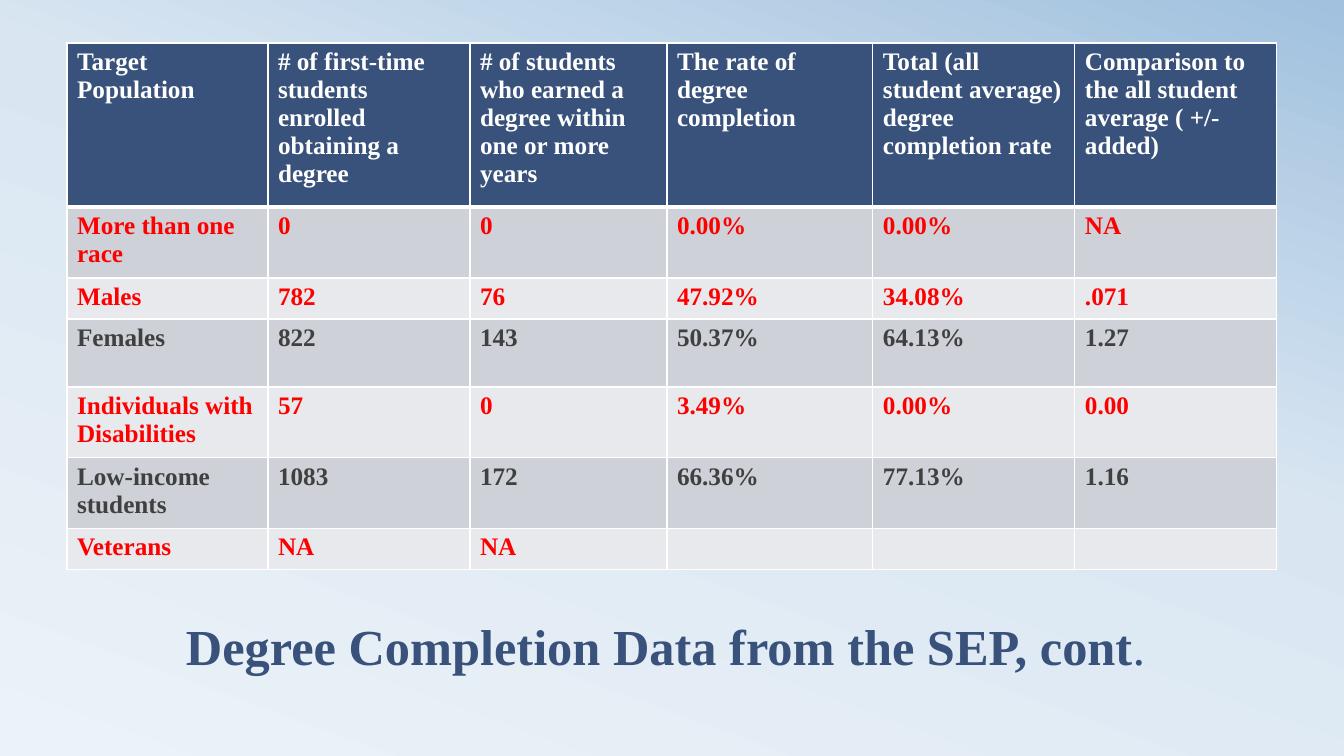
from copy import deepcopy

from lxml.etree import SubElement
from pptx import Presentation
from pptx.dml.color import RGBColor as RGB
from pptx.enum.text import MSO_ANCHOR as ANCHOR, PP_ALIGN as ALIGN
from pptx.oxml.ns import qn
from pptx.util import Pt

HEADINGS = [
    "Target Population",
    "# of first-time students enrolled obtaining a degree",
    "# of students who earned a degree within one or more years",
    "The rate of degree completion",
    "Total (all student average) degree completion rate",
    "Comparison to the all student average ( +/- added)",
]
POPULATIONS = [
    ("More than one race", "0", "0", "0.00%", "0.00%", "NA"),
    ("Males", "782", "76", "47.92%", "34.08%", ".071"),
    ("Females", "822", "143", "50.37%", "64.13%", "1.27"),
    ("Individuals with Disabilities", "57", "0", "3.49%", "0.00%", "0.00"),
    ("Low-income students", "1083", "172", "66.36%", "77.13%", "1.16"),
    ("Veterans", "NA", "NA", "", "", ""),
]
ABOVE_AVERAGE = {"Females", "Low-income students"}
TITLE = [("Degree Completion Data from the SEP, cont", True), (". ", False)]

COLORS = {
    "navy": "39527B", "white": "FFFFFF", "red": "FF0000", "gray": "404040",
    "dark_band": "CED1D7", "light_band": "E8E9EC",
}
BACKDROP = [(0, "ECF3F8"), (0.58, "D9E6F2"), (1, "A1C1DE")]
FONT = "Times New Roman"
PX = 12192000 / 1344
COLUMN_WIDTHS = [201, 202, 197, 206, 202, 202]
ROW_HEIGHTS = [164, 71, 41, 68, 66, 66, 41]
LEFT, TABLE_TOP, TITLE_TOP, TITLE_HEIGHT = 67, 43, 562, 118
WIDTH = sum(COLUMN_WIDTHS)


def px(length):
    return round(length * PX)


def color(name):
    return RGB.from_string(COLORS[name])


def style(font, size, name):
    font.name, font.size, font.color.rgb = FONT, Pt(size), color(name)


def paint_backdrop(slide):
    fill = slide.background.fill
    fill.gradient()
    fill.gradient_angle = 70
    stops = slide.element.find(".//" + qn("a:gsLst"))
    stops.append(deepcopy(stops[-1]))
    for stop, (position, shade) in zip(fill.gradient_stops, BACKDROP):
        stop.position = position
        stop.color.rgb = RGB.from_string(shade)


def add_borders(cell, widths):
    properties = cell._tc.get_or_add_tcPr()
    for side, width in zip("LRTB", widths):
        line = SubElement(properties, qn(f"a:ln{side}"), w=str(Pt(width)))
        solid = SubElement(line, qn("a:solidFill"))
        SubElement(solid, qn("a:srgbClr"), val=COLORS["white"])


def add_completion_table(slide):
    rows = [HEADINGS, *POPULATIONS]
    table = slide.shapes.add_table(
        len(rows), len(HEADINGS), px(LEFT), px(TABLE_TOP),
        px(WIDTH), px(sum(ROW_HEIGHTS))).table
    for column, width in zip(table.columns, COLUMN_WIDTHS):
        column.width = px(width)
    for r, (row, height, texts) in enumerate(zip(table.rows, ROW_HEIGHTS, rows)):
        row.height = px(height)
        if r == 0:
            band, ink = "navy", "white"
        else:
            band = "dark_band" if r % 2 else "light_band"
            ink = "gray" if texts[0] in ABOVE_AVERAGE else "red"
        for cell, text in zip(row.cells, texts):
            add_borders(cell, (1, 1, 3 if r == 1 else 1, 3 if r == 0 else 1))
            cell.fill.solid()
            cell.fill.fore_color.rgb = color(band)
            cell.text = text
            font = cell.text_frame.paragraphs[0].font
            style(font, 18, ink)
            font.bold = True


def add_title(slide):
    frame = slide.shapes.add_textbox(
        px(LEFT), px(TITLE_TOP), px(WIDTH), px(TITLE_HEIGHT)).text_frame
    frame.word_wrap = True
    frame.vertical_anchor = ANCHOR.BOTTOM
    line = frame.paragraphs[0]
    line.alignment = ALIGN.CENTER
    line.line_spacing = 0.8
    style(line.font, 36, "navy")
    for text, bold in TITLE:
        run = line.add_run()
        run.text = text
        run.font.bold = bold


def main():
    deck = Presentation()
    deck.slide_width, deck.slide_height = px(1344), px(756)
    slide = deck.slides.add_slide(deck.slide_layouts[6])
    paint_backdrop(slide)
    add_title(slide)
    add_completion_table(slide)
    deck.save("out.pptx")


if __name__ == "__main__":
    main()
